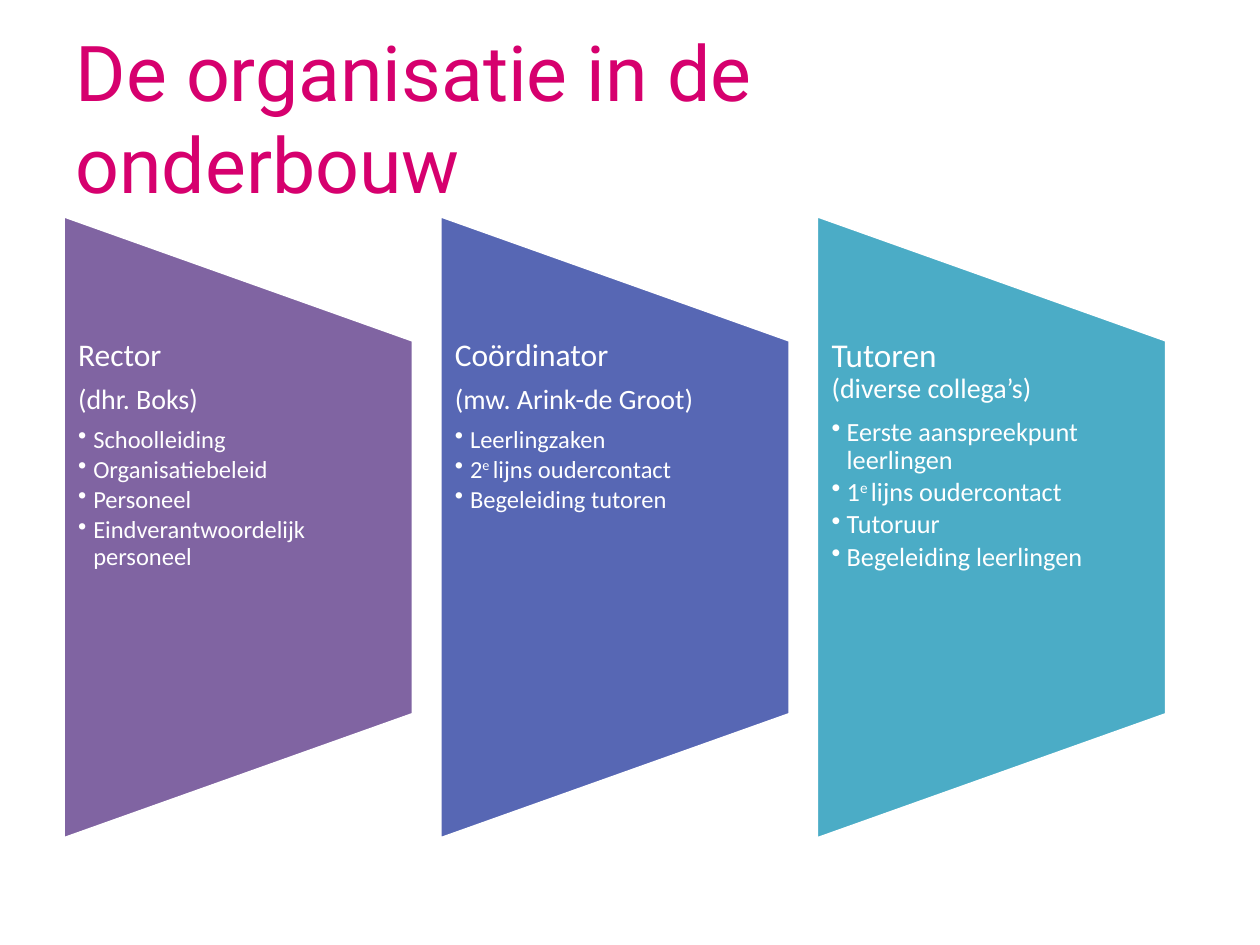
from lxml import etree
from pptx import Presentation
from pptx import util as u
from pptx.dml.color import RGBColor
from pptx.enum import shapes, text
from pptx.oxml.ns import qn

COLORS = {
    "title": "D6006E",
    "white": "FFFFFF",
    "purple": "8064A2",
    "blue": "5767B4",
    "teal": "4BACC6",
}
LEFT, PITCH = 0.5, 2.99
PANEL_W, PANEL_H, PANEL_TOP = 2.78, 4.95, 1.71
TEXT_TOP, TEXT_H = 2.69, 2.97
INDENT = 0.12

# Each heading paragraph is a list of (line, size); ^ marks superscript.
ROLES = [
    ("purple", [[("Rector", 18)], [("(dhr. Boks)", 16)]], 14,
     ["Schoolleiding", "Organisatiebeleid", "Personeel",
      "Eindverantwoordelijk personeel"]),
    ("blue", [[("Coördinator", 18)], [("(mw. Arink-de Groot)", 16)]], 14,
     ["Leerlingzaken", "2^e ^lijns oudercontact", "Begeleiding tutoren"]),
    ("teal", [[("Tutoren", 19), ("(diverse collega’s)", 16)]], 15,
     ["Eerste aanspreekpunt leerlingen", "1^e ^lijns oudercontact",
      "Tutoruur", "Begeleiding leerlingen"]),
]


def rgb(name):
    return RGBColor.from_string(COLORS[name])


def write(p, content, size, font="Calibri", color="white"):
    """Add runs to p; parts between ^ marks become superscript."""
    for i, part in enumerate(content.split("^")):
        r = p.add_run()
        r.text = part
        r.font.size = u.Pt(size)
        r.font.name = font
        r.font.color.rgb = rgb(color)
        if i % 2:
            r.font._element.set("baseline", "30000")


def add_bullet(p):
    pPr = p._p.get_or_add_pPr()
    pPr.set("marL", str(u.Inches(INDENT)))
    pPr.set("indent", str(-u.Inches(INDENT)))
    etree.SubElement(pPr, qn("a:buChar")).set("char", "•")


def add_title(slide, content):
    sp = slide.shapes.title
    sp.left, sp.top = u.Inches(LEFT), u.Inches(0.3)
    sp.width, sp.height = u.Inches(8.75), u.Inches(1.25)
    tf = sp.text_frame
    tf.auto_size = text.MSO_AUTO_SIZE.NONE
    tf.vertical_anchor = text.MSO_ANCHOR.MIDDLE
    tf.margin_right = u.Inches(0.3)
    p = tf.paragraphs[0]
    p.alignment = text.PP_ALIGN.LEFT
    write(p, content, 44, "Roboto", "title")


def add_panel(slide, left, color):
    """Add a trapezoid turned a quarter left, given its visible left edge."""
    shift = (PANEL_H - PANEL_W) / 2
    sp = slide.shapes.add_shape(
        shapes.MSO_SHAPE.FLOWCHART_MANUAL_OPERATION,
        u.Inches(left - shift), u.Inches(PANEL_TOP + shift),
        u.Inches(PANEL_H), u.Inches(PANEL_W))
    sp.rotation = 270
    sp.shadow.inherit = False
    sp.fill.solid()
    sp.fill.fore_color.rgb = rgb(color)
    sp.line.color.rgb = rgb("white")
    sp.line.width = u.Pt(2)


def add_role_text(slide, left, headings, size, tasks):
    tf = slide.shapes.add_textbox(u.Inches(left), u.Inches(TEXT_TOP),
                                  u.Inches(PANEL_W), u.Inches(TEXT_H)).text_frame
    tf.word_wrap = True
    tf.margin_left = tf.margin_right = u.Inches(0.12)
    tf.margin_top = tf.margin_bottom = 0
    paragraphs = headings + [[(task, size)] for task in tasks]
    for i, lines in enumerate(paragraphs):
        is_task = i >= len(headings)
        p = tf.add_paragraph() if i else tf.paragraphs[0]
        if is_task:
            add_bullet(p)
            p.level = 1
        p.line_spacing = 0.9
        p.space_after = u.Pt(round(lines[0][1] * (0.15 if is_task else 0.4), 1))
        for j, (line, line_size) in enumerate(lines):
            if j:
                p.add_line_break()
            write(p, line, line_size)


def main():
    prs = Presentation()
    prs.slide_width, prs.slide_height = u.Inches(10), u.Inches(7.5)
    slide = prs.slides.add_slide(prs.slide_layouts[5])
    add_title(slide, "De organisatie in de onderbouw")
    for col, (color, headings, size, tasks) in enumerate(ROLES):
        left = LEFT + col * PITCH
        add_panel(slide, left, color)
        add_role_text(slide, left, headings, size, tasks)
    prs.save("out.pptx")


if __name__ == "__main__":
    main()
